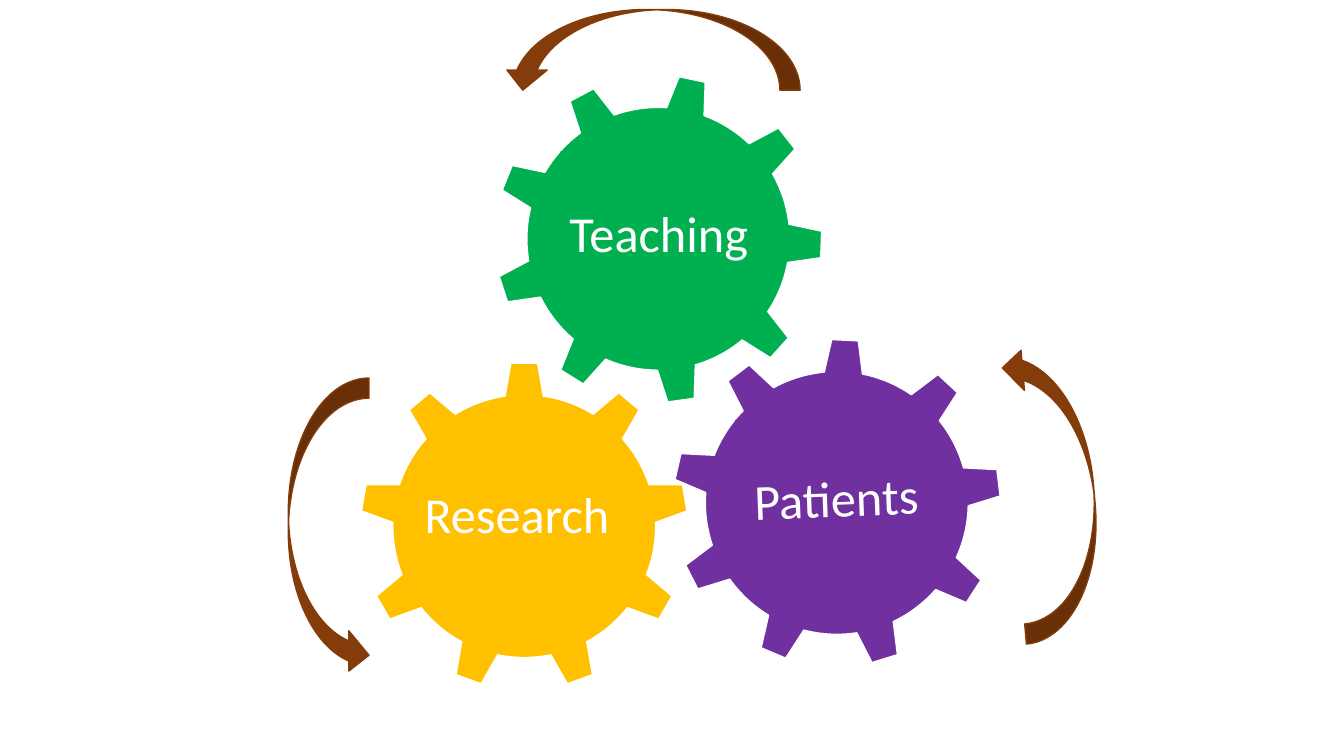
from dataclasses import dataclass

import pptx
import pptx.dml.color
import pptx.enum.shapes
import pptx.enum.text
import pptx.util

Inches = pptx.util.Inches
Pt = pptx.util.Pt
RGBColor = pptx.dml.color.RGBColor
Shape = pptx.enum.shapes.MSO_SHAPE
Anchor = pptx.enum.text.MSO_ANCHOR
Align = pptx.enum.text.PP_ALIGN
AutoSize = pptx.enum.text.MSO_AUTO_SIZE

WHITE = RGBColor(0xFF, 0xFF, 0xFF)
GREEN = RGBColor(0x00, 0xB0, 0x50)
PURPLE = RGBColor(0x70, 0x30, 0xA0)
GOLD = RGBColor(0xFF, 0xC0, 0x00)
BROWN = RGBColor(0x84, 0x3C, 0x0B)

GEAR_SIZE = 3.26
LABEL_WIDTH, LABEL_HEIGHT = 1.95, 1.68
ARROW_WIDTH, ARROW_HEIGHT = 0.8, 2.95
LABEL_FONT = {"name": "Calibri", "size": Pt(36)}
LABEL_FRAME = {
    "word_wrap": True,
    "vertical_anchor": Anchor.MIDDLE,
    "margin_left": Inches(0.08),
    "margin_right": Inches(0.08),
    "margin_top": Inches(0.08),
    "margin_bottom": Inches(0.08),
}
LABEL_PARAGRAPH = {"alignment": Align.CENTER, "line_spacing": 0.9}
CAPTION_FRAME = {"word_wrap": False, "auto_size": AutoSize.SHAPE_TO_FIT_TEXT}


@dataclass(frozen=True)
class Box:
    left: float
    top: float
    width: float
    height: float
    rotation: float = 0

    def lengths(self) -> tuple:
        return tuple(map(Inches, (self.left, self.top, self.width, self.height)))


@dataclass(frozen=True)
class LabelledGear:
    text: str
    gear: Box
    label: Box
    color: RGBColor


LABELLED_GEARS = [
    LabelledGear(
        "Teaching",
        Box(4.9, 0.74, GEAR_SIZE, GEAR_SIZE, 12),
        Box(5.56, 1.5, LABEL_WIDTH, LABEL_HEIGHT),
        GREEN,
    ),
    LabelledGear(
        "Patients",
        Box(6.67, 3.36, GEAR_SIZE, GEAR_SIZE, 2.9),
        Box(7.32, 4.13, LABEL_WIDTH, LABEL_HEIGHT, 357.9),
        PURPLE,
    ),
]
RESEARCH_GEAR = Box(3.57, 3.59, GEAR_SIZE, GEAR_SIZE)
RESEARCH_CAPTION = Box(4.11, 4.74, 2.05, 0.71)
ARROWS = [
    Box(2.86, 3.75, ARROW_WIDTH, ARROW_HEIGHT),
    Box(10.05, 3.41, ARROW_WIDTH, ARROW_HEIGHT, 175),
    Box(6.06, -0.98, ARROW_WIDTH, ARROW_HEIGHT, 90),
]


def set_attributes(target: object, values: dict) -> None:
    for name, value in values.items():
        setattr(target, name, value)


def add_filled_shape(shapes, kind, box: Box, fill: RGBColor, line: RGBColor | None):
    shape = shapes.add_shape(kind, *box.lengths())
    shape.rotation = box.rotation
    shape.shadow.inherit = False
    shape.fill.solid()
    shape.fill.fore_color.rgb = fill
    if line is None:
        shape.line.fill.background()
    else:
        shape.line.color.rgb = line
        shape.line.width = Pt(1)
    return shape


def write_text(shape, text: str, frame_format: dict, paragraph_format: dict) -> None:
    set_attributes(shape.text_frame, frame_format)
    paragraph = shape.text_frame.paragraphs[0]
    set_attributes(paragraph, paragraph_format)
    run = paragraph.add_run()
    run.text = text
    set_attributes(run.font, LABEL_FONT)
    run.font.color.rgb = WHITE


def add_labelled_gear(slide, item: LabelledGear) -> None:
    group = slide.shapes.add_group_shape()
    add_filled_shape(group.shapes, Shape.GEAR_9, item.gear, item.color, WHITE)
    label = add_filled_shape(group.shapes, Shape.RECTANGLE, item.label, item.color, None)
    write_text(label, item.text, LABEL_FRAME, LABEL_PARAGRAPH)


def main() -> None:
    presentation = pptx.Presentation()
    presentation.slide_width = Inches(13.33)
    presentation.slide_height = Inches(7.5)
    slide = presentation.slides.add_slide(presentation.slide_layouts[6])

    for item in LABELLED_GEARS:
        add_labelled_gear(slide, item)
    add_filled_shape(slide.shapes, Shape.GEAR_9, RESEARCH_GEAR, GOLD, WHITE)
    caption = slide.shapes.add_textbox(*RESEARCH_CAPTION.lengths())
    write_text(caption, "Research", CAPTION_FRAME, {})
    for arrow in ARROWS:
        add_filled_shape(slide.shapes, Shape.CURVED_RIGHT_ARROW, arrow, BROWN, BROWN)

    presentation.save("out.pptx")


if __name__ == "__main__":
    main()
